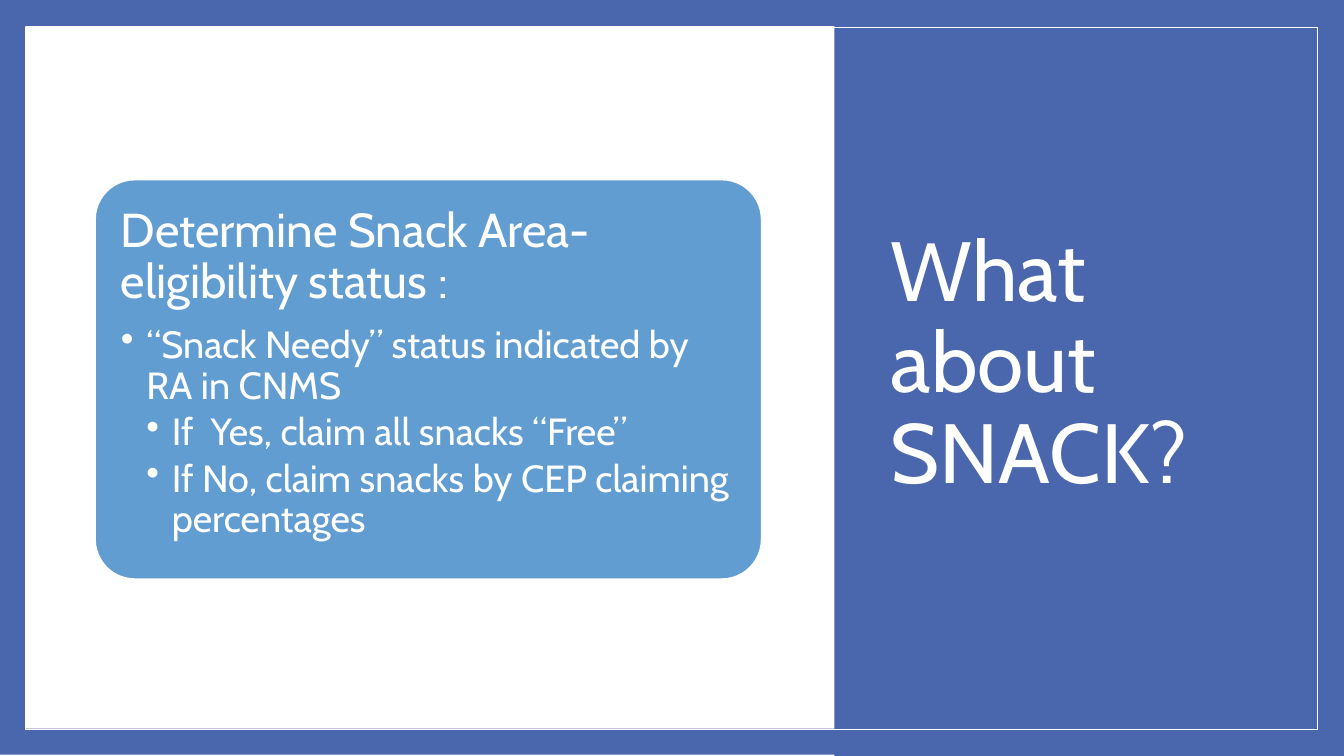
from dataclasses import dataclass

from lxml import etree
from pptx import Presentation, util as u
from pptx.dml.color import RGBColor
from pptx.enum import shapes, text
from pptx.oxml.ns import qn
from pptx.util import Cm


@dataclass(frozen=True)
class Theme:
    font: str = "Cabin"
    blue: str = "4A66AC"
    light_blue: str = "629DD1"
    white: str = "FFFFFF"
    title: int = 60
    heading: int = 34
    body: int = 27
    line_spacing: float = 0.9


THEME = Theme()
INDENT = Cm(0.64)
CARD_INSET = Cm(0.36)

HEADING = "Determine Snack Area-eligibility status :"
BULLETS = [
    (1, "“Snack Needy” status indicated by RA in CNMS"),
    (2, "If  Yes, claim all snacks “Free”"),
    (2, "If No, claim snacks by CEP claiming percentages"),
]


def add_box(s, kind, left, top, width, height, fill=None, line=None, weight=1):
    """Flat shape with an optional fill and outline."""
    sp = s.shapes.add_shape(kind, Cm(left), Cm(top), Cm(width), Cm(height))
    sp.shadow.inherit = False
    if fill:
        sp.fill.solid()
        sp.fill.fore_color.rgb = RGBColor.from_string(fill)
    else:
        sp.fill.background()
    if line:
        sp.line.color.rgb = RGBColor.from_string(line)
        sp.line.width = u.Pt(weight)
    else:
        sp.line.fill.background()
    return sp


def add_text_frame(s, left, top, width, height, anchor):
    """Wrapping text box; returns its text frame."""
    tf = s.shapes.add_textbox(Cm(left), Cm(top), Cm(width), Cm(height)).text_frame
    tf.word_wrap = True
    tf.vertical_anchor = anchor
    return tf


def style_paragraph(p, content, size, after=0):
    p.text = content
    p.font.name = THEME.font
    p.font.size = u.Pt(size)
    p.font.color.rgb = RGBColor.from_string(THEME.white)
    p.line_spacing = THEME.line_spacing
    p.space_after = u.Pt(after)


def add_bullet(tf, level, content):
    p = tf.add_paragraph()
    style_paragraph(p, content, THEME.body, after=4)
    p.level = level
    pPr = p._p.get_or_add_pPr()
    pPr.set("marL", str(INDENT * level))
    pPr.set("indent", str(-INDENT))
    bullet = etree.Element(qn("a:buChar"), char="•")
    pPr.find(qn("a:defRPr")).addprevious(bullet)


def add_card(s):
    """Rounded card with a heading and nested bullets."""
    card = add_box(s, shapes.MSO_SHAPE.ROUNDED_RECTANGLE, 2.39, 4.52, 16.81, 10.08,
                   THEME.light_blue, THEME.white, 1.5)
    card.adjustments[0] = 0.1
    tf = add_text_frame(s, 2.69, 4.83, 16.23, 9.5, text.MSO_ANCHOR.TOP)
    tf.margin_left = tf.margin_right = tf.margin_top = tf.margin_bottom = CARD_INSET
    style_paragraph(tf.paragraphs[0], HEADING, THEME.heading, after=12)
    for level, content in BULLETS:
        add_bullet(tf, level, content)


def add_title(s):
    tf = add_text_frame(s, 22.2, 1.7, 9.93, 15.01, text.MSO_ANCHOR.MIDDLE)
    style_paragraph(tf.paragraphs[0], "What about SNACK?", THEME.title)


def main():
    prs = Presentation()
    prs.slide_width, prs.slide_height = Cm(33.87), Cm(19.05)
    s = prs.slides.add_slide(prs.slide_layouts[6])
    rect = shapes.MSO_SHAPE.RECTANGLE

    # Blue border, white content area, blue title panel
    add_box(s, rect, 0, -0.03, 33.87, 19.05, THEME.blue)
    add_box(s, rect, 0.64, 0.66, 32.56, 17.7, THEME.white)
    add_box(s, rect, 21.03, 0, 12.84, 19.05, THEME.blue)

    # Title and the thin frame around the slide
    add_title(s)
    add_box(s, rect, 0.64, 0.69, 32.56, 17.7, line=THEME.white)

    # Content card
    add_card(s)

    prs.save("out.pptx")


if __name__ == "__main__":
    main()
